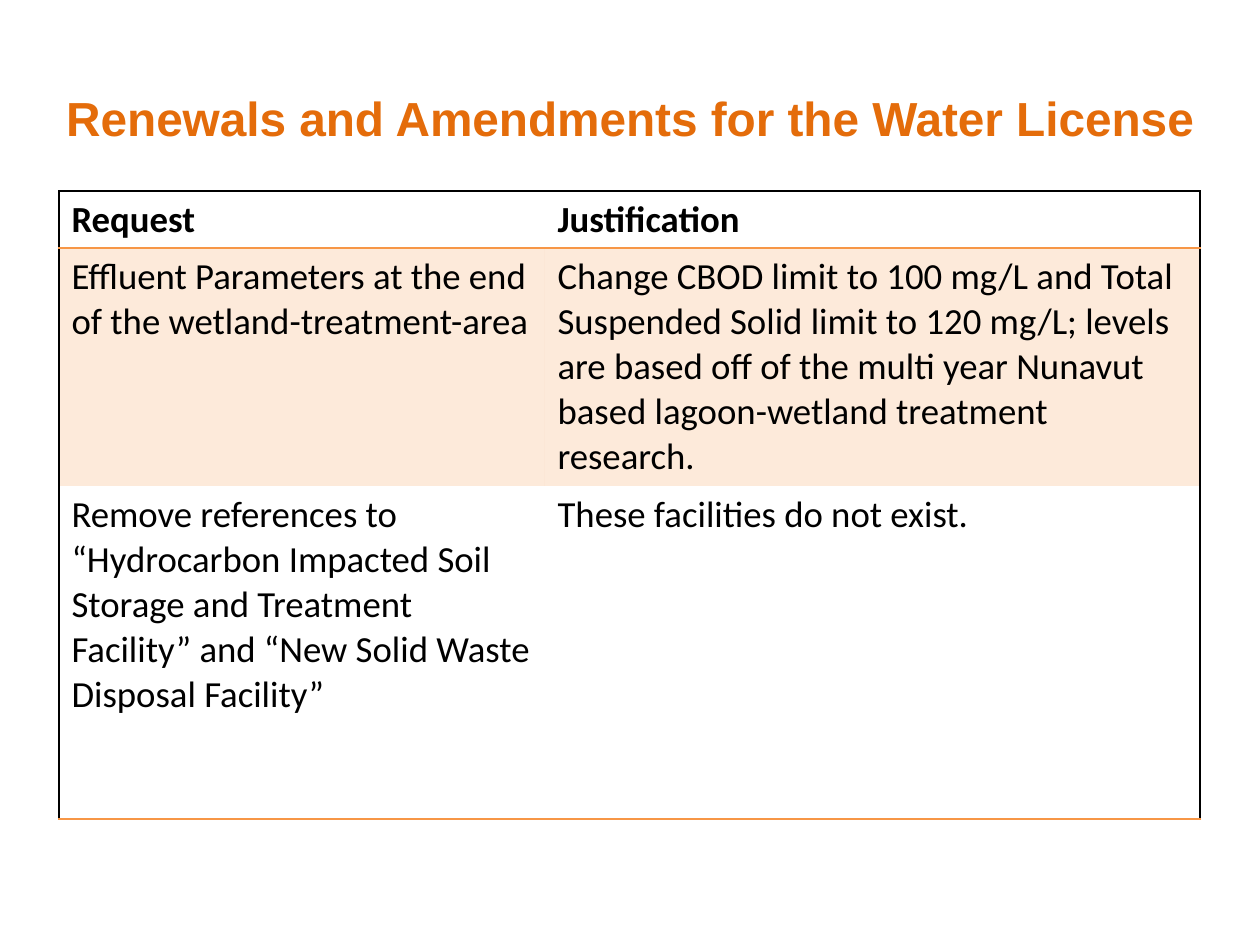
import pptx
import pptx.dml.color
import pptx.enum.text
import pptx.oxml
import pptx.oxml.ns
import pptx.util

SCALE = 914400 / 126
COLORS = {"title": "E46C0A", "text": "000000", "accent": "F79646"}
SIDES = {"left": "lnL", "right": "lnR", "top": "lnT", "bottom": "lnB"}
ROWS = [
    ("Request", "Justification"),
    ("Effluent Parameters at the end of the wetland-treatment-area",
     "Change CBOD limit to 100 mg/L and Total Suspended Solid limit to 120 mg/L; "
     "levels are based off of the multi year Nunavut based lagoon-wetland treatment research."),
    ("Remove references to “Hydrocarbon Impacted Soil Storage and Treatment Facility” "
     "and “New Solid Waste Disposal Facility”",
     "These facilities do not exist."),
]


def px(n):
    return pptx.util.Emu(round(n * SCALE))


def rgb(name):
    return pptx.dml.color.RGBColor.from_string(COLORS[name])


def write(tf, text, size=21, font="Calibri", color="text", bold=False, align="LEFT"):
    p = tf.paragraphs[0]
    p.alignment = getattr(pptx.enum.text.PP_ALIGN, align)
    r = p.add_run()
    r.text = text
    r.font.size = pptx.util.Pt(size)
    r.font.name = font
    r.font.bold = bold
    r.font.color.rgb = rgb(color)


class Deck:
    def __init__(self, width, height):
        self.prs = pptx.Presentation()
        self.prs.slide_width, self.prs.slide_height = px(width), px(height)
        self.s = self.prs.slides.add_slide(self.prs.slide_layouts[6])

    def title(self, text, x, y, w, h):
        tf = self.s.shapes.add_textbox(px(x), px(y), px(w), px(h)).text_frame
        tf.word_wrap = True
        tf.vertical_anchor = pptx.enum.text.MSO_ANCHOR.MIDDLE
        write(tf, text, size=27.3, font="Arial", color="title", bold=True, align="CENTER")

    def borders(self, cell, **colors):
        tcPr = cell._tc.get_or_add_tcPr()
        for side, tag in SIDES.items():
            color = colors.get(side)
            paint = (f'<a:solidFill><a:srgbClr val="{COLORS[color]}"/></a:solidFill>'
                     if color else "<a:noFill/>")
            tcPr.append(pptx.oxml.parse_xml(
                f'<a:{tag} {pptx.oxml.ns.nsdecls("a")} w="12700">{paint}</a:{tag}>'))

    def tint(self, cell, color, percent):
        cell.fill.solid()
        cell.fill.fore_color.rgb = rgb(color)
        clr = cell._tc.tcPr.find(pptx.oxml.ns.qn("a:solidFill"))[0]
        clr.append(pptx.oxml.parse_xml(
            f'<a:alpha {pptx.oxml.ns.nsdecls("a")} val="{percent * 1000}"/>'))

    def table(self, rows, x, y, widths, heights):
        table = self.s.shapes.add_table(len(rows), len(widths), px(x), px(y),
                                        px(sum(widths)), px(sum(heights))).table
        table.horz_banding = False
        for column, width in zip(table.columns, widths):
            column.width = px(width)
        for row, height in zip(table.rows, heights):
            row.height = px(height)
        last_row, last_col = len(rows) - 1, len(widths) - 1
        for i, texts in enumerate(rows):
            for j, text in enumerate(texts):
                cell = table.cell(i, j)
                write(cell.text_frame, text, bold=i == 0)
                self.borders(
                    cell,
                    left="text" if j == 0 else None,
                    right="text" if j == last_col else None,
                    top={0: "text", 1: "accent"}.get(i),
                    bottom="accent" if i in (0, last_row) else None)
                if i % 2:
                    self.tint(cell, "accent", 20)
                else:
                    cell.fill.background()


def main():
    deck = Deck(1260, 945)
    deck.title("Renewals and Amendments for the Water License", 0, 38, 1260, 158)
    deck.table(ROWS, 59, 191, widths=[486, 655], heights=[57, 238, 333])
    deck.prs.save("out.pptx")


if __name__ == "__main__":
    main()
